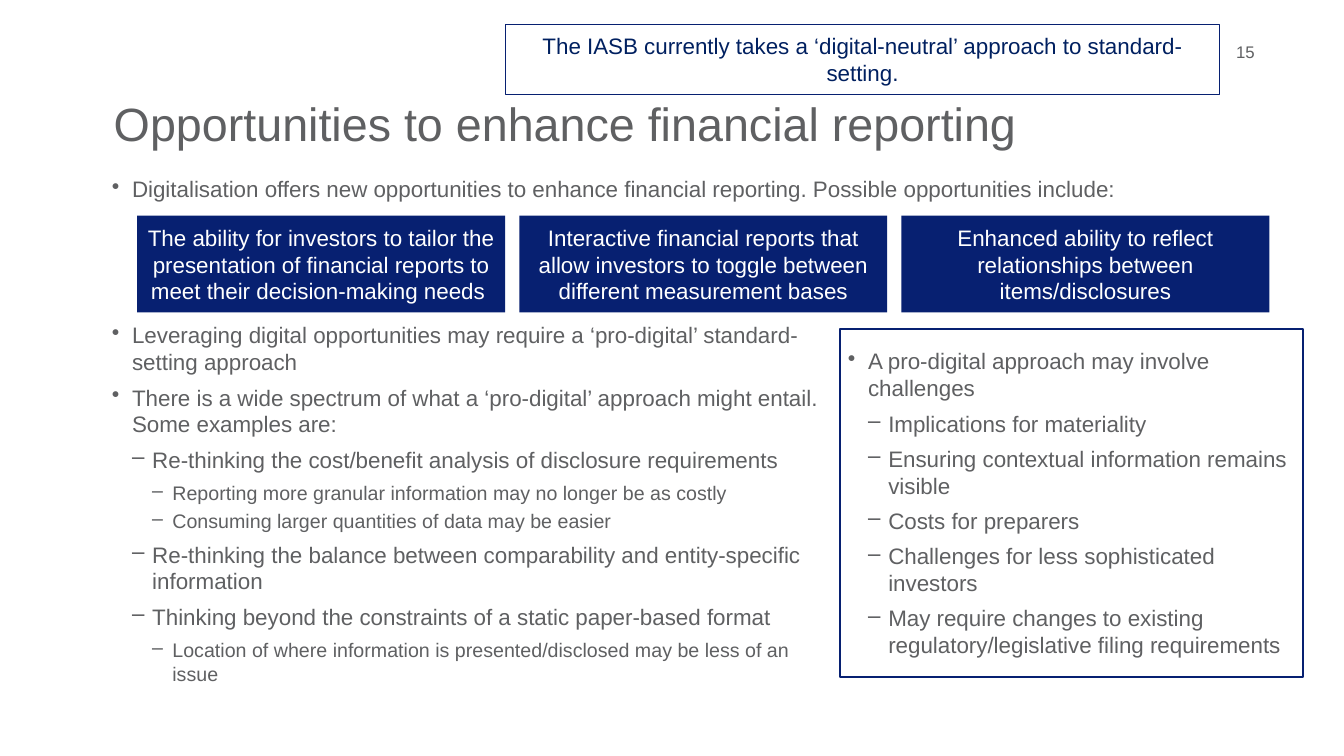
from lxml import etree
from pptx import Presentation
from pptx.dml.color import RGBColor
from pptx.enum.shapes import MSO_SHAPE
from pptx.enum.text import MSO_ANCHOR, PP_ALIGN
from pptx.oxml.ns import qn
from pptx.util import Inches, Pt

RECT = MSO_SHAPE.RECTANGLE
TOP, MIDDLE = MSO_ANCHOR.TOP, MSO_ANCHOR.MIDDLE
LEFT, CENTER = PP_ALIGN.LEFT, PP_ALIGN.CENTER
NAVY, INK, GREY, WHITE = "072071", "002060", "5F6062", "FFFFFF"
MARKS = "•––"
SIZES = (16, 16, 14)
STEP = 0.2

CARDS = (
    "The ability for investors to tailor the presentation of financial reports to meet their decision-making needs ",
    "Interactive financial reports that allow investors to toggle between different measurement bases",
    "Enhanced ability to reflect relationships between items/disclosures",
)
INTRO = (
    (0, "Digitalisation offers new opportunities to enhance financial reporting. Possible opportunities include:"),
)
POINTS = (
    (0, "Leveraging digital opportunities may require a ‘pro-digital’ standard-setting approach"),
    (0, "There is a wide spectrum of what a ‘pro-digital’ approach might entail. Some examples are:"),
    (1, "Re-thinking the cost/benefit analysis of disclosure requirements"),
    (2, "Reporting more granular information may no longer be as costly"),
    (2, "Consuming larger quantities of data may be easier"),
    (1, "Re-thinking the balance between comparability and entity-specific information"),
    (1, "Thinking beyond the constraints of a static paper-based format"),
    (2, "Location of where information is presented/disclosed may be less of an issue"),
)
RISKS = (
    (0, "A pro-digital approach may involve challenges"),
    (1, "Implications for materiality"),
    (1, "Ensuring contextual information remains visible"),
    (1, "Costs for preparers"),
    (1, "Challenges for less sophisticated investors"),
    (1, "May require changes to existing regulatory/legislative filing requirements"),
)


def color(code):
    return RGBColor.from_string(code)


def write(para, text, size=16, ink=GREY, align=LEFT):
    para.alignment = align
    run = para.add_run()
    run.text = text
    run.font.name = "Arial"
    run.font.size = Pt(size)
    run.font.color.rgb = color(ink)


def setup(shape, side, rise, anchor):
    frame = shape.text_frame
    frame.word_wrap = True
    frame.vertical_anchor = anchor
    frame.margin_left = frame.margin_right = Inches(side)
    frame.margin_top = frame.margin_bottom = Inches(rise)
    return frame


def add_text(slide, area, side=0.08, rise=0.08):
    shape = slide.shapes.add_textbox(*map(Inches, area))
    return setup(shape, side, rise, TOP)


def add_box(slide, area, fill=None, line=None, width=1, side=0.08, rise=0.08):
    shape = slide.shapes.add_shape(RECT, *map(Inches, area))
    shape.shadow.inherit = False
    if fill:
        shape.fill.solid()
        shape.fill.fore_color.rgb = color(fill)
    else:
        shape.fill.background()
    if line:
        shape.line.color.rgb = color(line)
        shape.line.width = Pt(width)
    else:
        shape.line.fill.background()
    return setup(shape, side, rise, MIDDLE)


def add_list(frame, items):
    for i, (level, text) in enumerate(items):
        para = frame.add_paragraph() if i else frame.paragraphs[0]
        para.level = level
        para.space_before = Pt(3 if i else 0)
        tight = level == 2 and items[i + 1:i + 2] and items[i + 1][0] == 2
        para.space_after = Pt(0 if tight else 3)
        props = para._p.get_or_add_pPr()
        props.set("marL", str(Inches(STEP * (level + 1))))
        props.set("indent", str(Inches(-STEP)))
        mark = etree.SubElement(props, qn("a:buChar"))
        mark.set("char", MARKS[level])
        write(para, text, size=SIZES[level])


def main():
    deck = Presentation()
    deck.slide_width, deck.slide_height = Inches(13.33), Inches(7.5)
    slide = deck.slides.add_slide(deck.slide_layouts[6])

    page = add_text(slide, (12.26, 0.41, 0.67, 0.29), side=0, rise=0)
    write(page.paragraphs[0], "15", size=12)
    title = add_text(slide, (1.03, 0.89, 11.46, 1.25), side=0.1, rise=0.05)
    write(title.paragraphs[0], "Opportunities to enhance financial reporting", size=33.3)

    add_list(add_text(slide, (1.03, 1.66, 11.6, 1.34)), INTRO)
    for i, text in enumerate(CARDS):
        card = add_box(slide, (1.36 + 3.79 * i, 2.14, 3.65, 0.96), fill=NAVY, side=0.1, rise=0.05)
        write(card.paragraphs[0], text, ink=WHITE, align=CENTER)
    add_list(add_box(slide, (8.33, 3.26, 4.59, 3.46), line=NAVY, width=1.5), RISKS)
    add_list(add_text(slide, (1.03, 3.11, 7.18, 3.96)), POINTS)

    note = add_box(slide, (5.01, 0.24, 7.09, 0.7), line=NAVY, width=0.75)
    write(note.paragraphs[0], "The IASB currently takes a ‘digital-neutral’ approach to standard-setting.",
          ink=INK, align=CENTER)
    deck.save("out.pptx")


if __name__ == "__main__":
    main()
